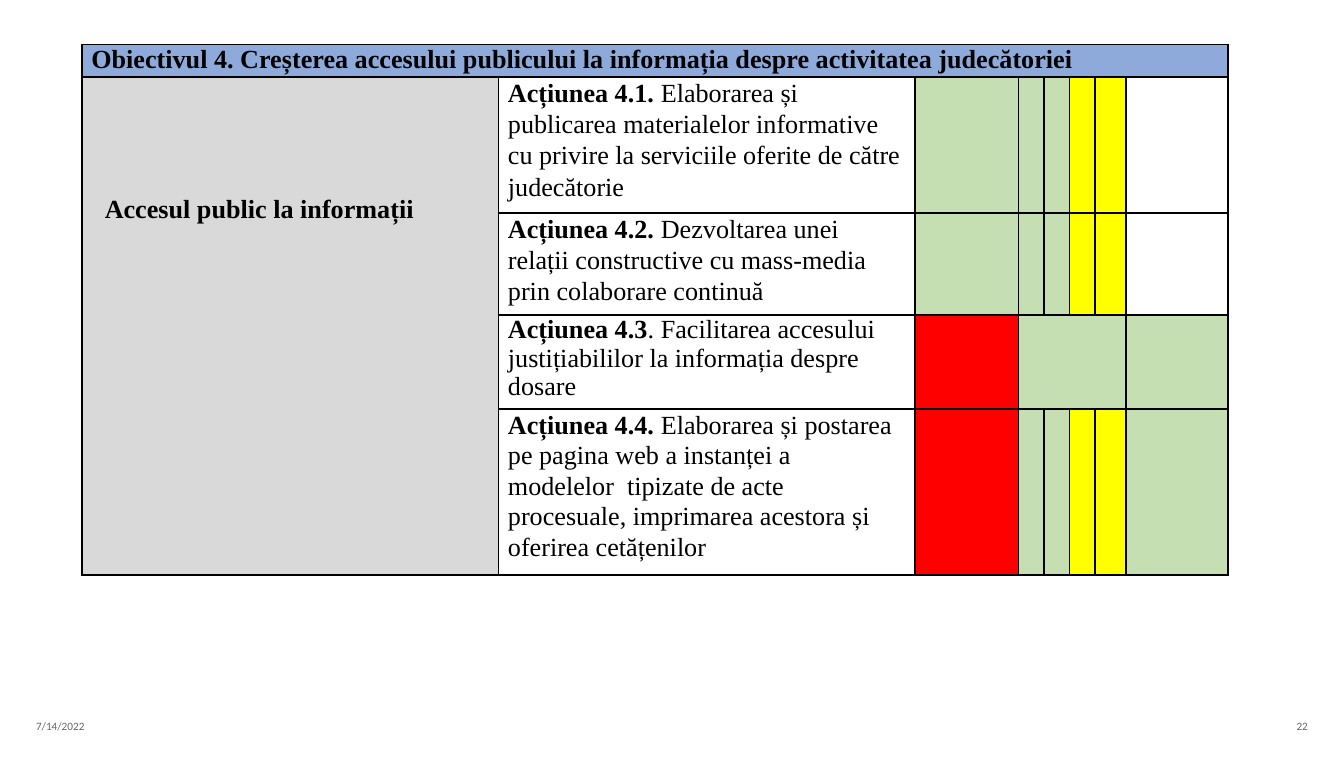
from dataclasses import dataclass

from lxml import etree
from pptx import Presentation
from pptx.dml.color import RGBColor
from pptx.enum.text import MSO_ANCHOR, PP_ALIGN
from pptx.oxml.ns import qn
from pptx.util import Inches, Pt

LEFT = PP_ALIGN.LEFT
RIGHT = PP_ALIGN.RIGHT
MIDDLE = MSO_ANCHOR.MIDDLE

BLACK, GRAY, WHITE = "000000", "6C6463", "FFFFFF"
BLUE, SILVER = "8EAADB", "D9D9D9"
GREEN, YELLOW, RED = "C5DFB3", "FFFF00", "FF0000"

COLUMN_WIDTHS = [3.1, 3.1, 0.77, 0.19, 0.19, 0.19, 0.23, 0.76]
ROW_HEIGHTS = [0.24, 1.01, 0.76, 0.7, 1.23]
FIRST_STATUS_COLUMN = 2
TEXT_INDENT = 0.07


@dataclass
class Action:
    label: str
    description: str
    line_spacing: float
    right_margin: float
    fills: list[str]


@dataclass
class Footer:
    text: str
    left: float
    alignment: PP_ALIGN


QUARTERS = [GREEN, GREEN, YELLOW, YELLOW]
ACTIONS = [
    Action("Acțiunea 4.1. ", "Elaborarea și publicarea materialelor informative cu privire "
           "la serviciile oferite de către judecătorie", 1.08, 0.05,
           [GREEN, *QUARTERS, WHITE]),
    Action("Acțiunea 4.2. ", "Dezvoltarea unei relații constructive cu mass-media "
           "prin colaborare continuă", 1.08, 0.12, [GREEN, *QUARTERS, WHITE]),
    Action("Acțiunea 4.3", ". Facilitarea accesului justițiabililor la informația "
           "despre dosare", 1.0, 0.12, [RED, *[GREEN] * 4, GREEN]),
    Action("Acțiunea 4.4. ", "Elaborarea și postarea pe pagina web a instanței a modelelor  "
           "tipizate de acte procesuale, imprimarea acestora și oferirea cetățenilor",
           1.06, 0.12, [RED, *QUARTERS, GREEN]),
]
FOOTERS = [Footer("7/14/2022", 0.17, LEFT), Footer("22", 7.5, RIGHT)]


def color(value: str) -> RGBColor:
    return RGBColor.from_string(value)


def format_run(run, font: str, size: float, fill: str, bold: bool = False) -> None:
    run.font.name = font
    run.font.size = Pt(size)
    run.font.bold = bold
    run.font.color.rgb = color(fill)


def add_borders(cell) -> None:
    properties = cell._tc.get_or_add_tcPr()
    for index, side in enumerate(("lnL", "lnR", "lnT", "lnB")):
        line = etree.Element(qn(f"a:{side}"), w=str(Pt(1)))
        fill = etree.SubElement(line, qn("a:solidFill"))
        etree.SubElement(fill, qn("a:srgbClr"), val=BLACK)
        properties.insert(index, line)


def paint_cell(cell, fill: str) -> None:
    cell.margin_left = cell.margin_right = cell.margin_top = cell.margin_bottom = 0
    cell.fill.solid()
    cell.fill.fore_color.rgb = color(fill)
    add_borders(cell)


def write_cell(cell, bold_text: str, plain_text: str = "", line_spacing: float = 1.0) -> None:
    cell.margin_left = Inches(TEXT_INDENT)
    paragraph = cell.text_frame.paragraphs[0]
    paragraph.line_spacing = line_spacing
    for text, bold in ((bold_text, True), (plain_text, False)):
        if text:
            run = paragraph.add_run()
            run.text = text
            format_run(run, "Times New Roman", 14, BLACK, bold)


def add_action_table(slide) -> None:
    frame = slide.shapes.add_table(
        len(ROW_HEIGHTS), len(COLUMN_WIDTHS), Inches(0.61), Inches(0.33),
        Inches(sum(COLUMN_WIDTHS)), Inches(sum(ROW_HEIGHTS)))
    table = frame.table
    table.first_row = table.horz_banding = False
    for column, width in zip(table.columns, COLUMN_WIDTHS):
        column.width = Inches(width)
    for row, height in zip(table.rows, ROW_HEIGHTS):
        row.height = Inches(height)

    for cell in table.rows[0].cells:
        paint_cell(cell, BLUE)
    for row_index, action in enumerate(ACTIONS, start=1):
        fills = [SILVER, WHITE, *action.fills]
        for column_index, fill in enumerate(fills):
            paint_cell(table.cell(row_index, column_index), fill)
        action_cell = table.cell(row_index, 1)
        write_cell(action_cell, action.label, action.description, action.line_spacing)
        action_cell.margin_right = Inches(action.right_margin)

    objective = table.cell(0, 0)
    write_cell(objective, "Obiectivul 4. Creșterea accesului publicului la informația "
               "despre activitatea judecătoriei")
    objective.margin_top = Inches(0.01)
    area = table.cell(1, 0)
    write_cell(area, "Accesul public la informații")
    area.margin_left = Inches(0.17)
    area.margin_top = Inches(0.88)

    objective.merge(table.cell(0, len(COLUMN_WIDTHS) - 1))
    area.merge(table.cell(len(ACTIONS), 0))
    first_quarter = FIRST_STATUS_COLUMN + 1
    table.cell(3, first_quarter).merge(table.cell(3, first_quarter + len(QUARTERS) - 1))


def add_footer(slide, footer: Footer) -> None:
    shape = slide.shapes.add_textbox(Inches(footer.left), Inches(5.3), Inches(2.33), Inches(0.2))
    text_frame = shape.text_frame
    text_frame.word_wrap = True
    text_frame.vertical_anchor = MIDDLE
    text_frame.text = footer.text
    paragraph = text_frame.paragraphs[0]
    paragraph.alignment = footer.alignment
    format_run(paragraph.runs[0], "Calibri", 6, GRAY)


def main() -> None:
    presentation = Presentation()
    presentation.slide_width = Inches(10)
    presentation.slide_height = Inches(5.67)
    slide = presentation.slides.add_slide(presentation.slide_layouts[6])
    for footer in FOOTERS:
        add_footer(slide, footer)
    add_action_table(slide)
    presentation.save("out.pptx")


if __name__ == "__main__":
    main()
